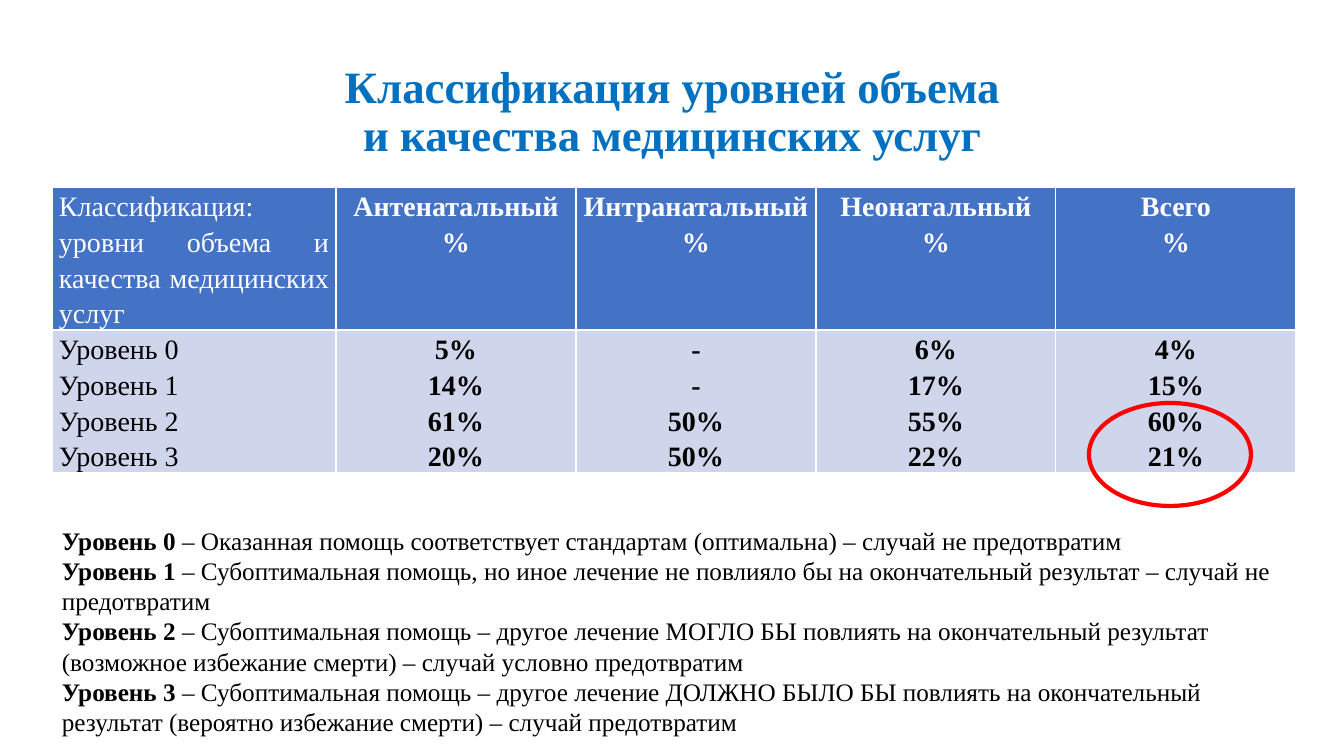
"""Build the slide on levels of the volume and quality of medical services."""
from pptx import Presentation
from pptx.dml.color import RGBColor
from pptx.enum.shapes import MSO_SHAPE
from pptx.enum.text import MSO_ANCHOR, MSO_AUTO_SIZE, PP_ALIGN
from pptx.util import Emu, Pt

COLORS = {"title": "0070C0", "header": "4472C4", "body": "CFD5EA",
          "white": "FFFFFF", "black": "000000", "accent": "FF0000"}
FONT = "Times New Roman"


def px(*lengths):
    return [Emu(round(length * 914400 / 100.8)) for length in lengths]


def add_run(paragraph, text, size, color, bold):
    run = paragraph.add_run()
    run.text = text
    run.font.name = FONT
    run.font.size = Pt(size)
    run.font.bold = bold
    run.font.color.rgb = RGBColor.from_string(COLORS[color])


presentation = Presentation()
presentation.slide_width, presentation.slide_height = px(1344, 756)
slide = presentation.slides.add_slide(presentation.slide_layouts[5])

title = slide.shapes.title
title.left, title.top, title.width, title.height = px(93, 40, 1159, 146)
title.text_frame.auto_size = MSO_AUTO_SIZE.NONE
title.text_frame.vertical_anchor = MSO_ANCHOR.MIDDLE
paragraph = title.text_frame.paragraphs[0]
paragraph.alignment = PP_ALIGN.CENTER
paragraph.line_spacing = 0.9
add_run(paragraph, "Классификация уровней объема", 32, "title", True)
paragraph.add_line_break()
add_run(paragraph, "и качества медицинских услуг", 32, "title", True)

rows = [
    [["Классификация: уровни объема и качества медицинских услуг"],
     ["Антенатальный", "%"], ["Интранатальный", "%"],
     ["Неонатальный", "%"], ["Всего", "%"]],
    [["Уровень 0", "Уровень 1", "Уровень 2", "Уровень 3"],
     ["5%", "14%", "61%", "20%"], ["-", "-", "50%", "50%"],
     ["6%", "17%", "55%", "22%"], ["4%", "15%", "60%", "21%"]],
]
table = slide.shapes.add_table(2, 5, *px(52, 187, 1244, 286)).table
for column, width in zip(table.columns, px(284, 240, 240, 240, 240)):
    column.width = width
for row_index, row in enumerate(rows):
    fill, color = [("header", "white"), ("body", "black")][row_index]
    for column_index, lines in enumerate(row):
        cell = table.cell(row_index, column_index)
        cell.fill.solid()
        cell.fill.fore_color.rgb = RGBColor.from_string(COLORS[fill])
        cell.margin_left, cell.margin_right = px(7, 7)
        cell.margin_top = cell.margin_bottom = 0
        is_label = column_index == 0
        for line_index, line in enumerate(lines):
            frame = cell.text_frame
            paragraph = frame.add_paragraph() if line_index else frame.paragraphs[0]
            paragraph.alignment = PP_ALIGN.JUSTIFY if is_label else PP_ALIGN.CENTER
            paragraph.line_spacing = 1.15
            add_run(paragraph, line, 20, color, not is_label)

ellipse = slide.shapes.add_shape(MSO_SHAPE.OVAL, *px(1089, 403, 162, 103))
ellipse.shadow.inherit = False
ellipse.fill.background()
ellipse.line.color.rgb = RGBColor.from_string(COLORS["accent"])
ellipse.line.width = Pt(3)

definitions = [
    "Оказанная помощь соответствует стандартам (оптимальна) – случай не предотвратим",
    "Субоптимальная помощь, но иное лечение не повлияло бы на окончательный "
    "результат – случай не предотвратим",
    "Субоптимальная помощь – другое лечение МОГЛО БЫ повлиять на окончательный "
    "результат (возможное избежание смерти) – случай условно предотвратим",
    "Субоптимальная помощь – другое лечение ДОЛЖНО БЫЛО БЫ повлиять на окончательный "
    "результат (вероятно избежание смерти) – случай предотвратим",
]
legend = slide.shapes.add_textbox(*px(52, 520, 1243, 224)).text_frame
legend.word_wrap = True
legend.auto_size = MSO_AUTO_SIZE.SHAPE_TO_FIT_TEXT
for level, definition in enumerate(definitions):
    paragraph = legend.add_paragraph() if level else legend.paragraphs[0]
    add_run(paragraph, f"Уровень {level}", 18, "black", True)
    add_run(paragraph, f" – {definition}", 18, "black", False)

presentation.save("out.pptx")
